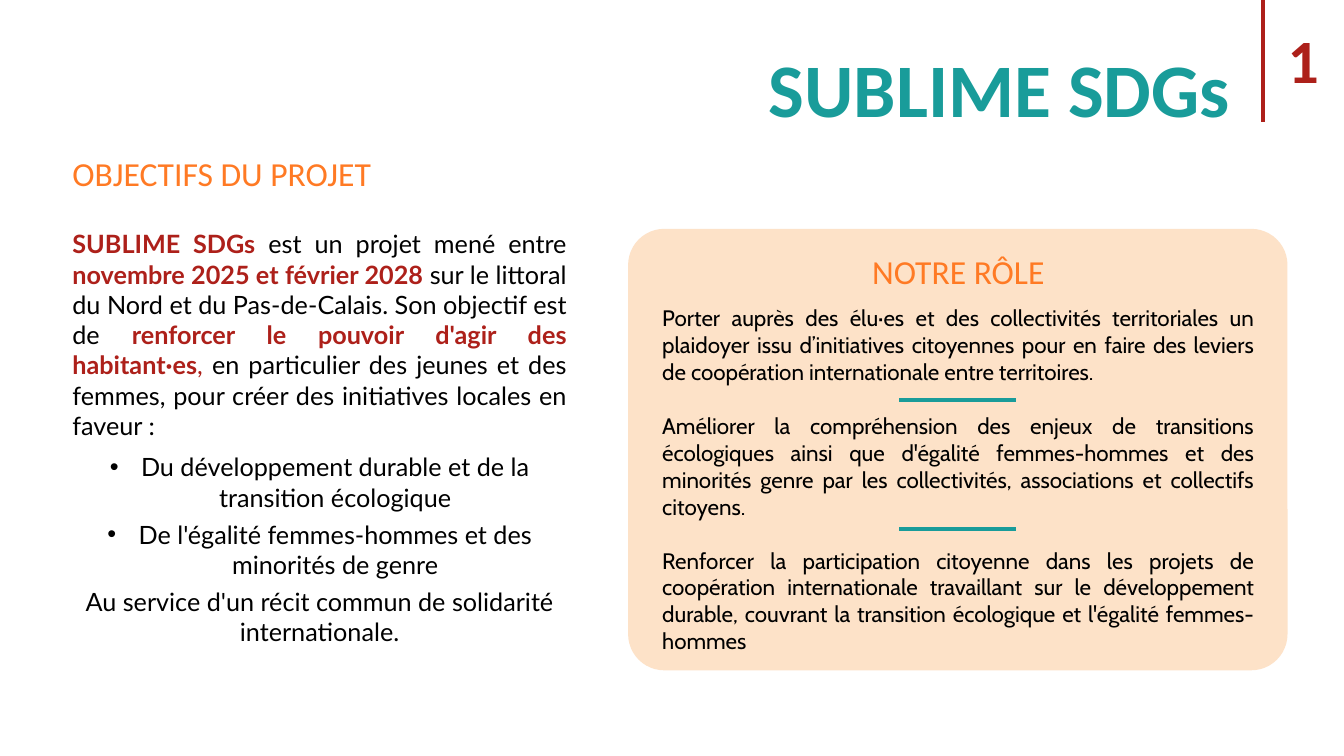
from lxml.etree import SubElement
from pptx import Presentation
from pptx.dml.color import RGBColor
from pptx.enum.shapes import MSO_CONNECTOR, MSO_SHAPE
from pptx.enum.text import PP_ALIGN
from pptx.oxml.ns import qn
from pptx.util import Inches, Pt

RED = RGBColor(0xAD, 0x20, 0x1A)
TEAL = RGBColor(0x19, 0x9C, 0x9A)
ORANGE = RGBColor(0xFF, 0x7A, 0x24)
PEACH = RGBColor(0xFD, 0xE2, 0xC8)
BLACK = RGBColor(0, 0, 0)

# text, box (left, top, width, height), size, colour, bold, alignment
HEADINGS = [
    ("SUBLIME SDGs", (1.69, 0.37, 10.61, 1.01), 54, TEAL, True, PP_ALIGN.RIGHT),
    ("OBJECTIFS DU PROJET", (0.62, 1.47, 4.88, 0.5), 24, ORANGE, False, PP_ALIGN.LEFT),
    ("NOTRE RÔLE", (8.09, 2.44, 2.83, 0.5), 24, ORANGE, False, PP_ALIGN.CENTER),
]
PAGE_NUMBER = "1"
# text, colour, bold
PROJECT = [
    ("SUBLIME SDGs", RED, True),
    (" est un projet mené entre ", BLACK, False),
    ("novembre 2025 et février 2028", RED, True),
    (" sur le littoral du Nord et du Pas-de‑Calais. Son objectif est de ", BLACK, False),
    ("renforcer le pouvoir d'agir des habitant·es", RED, True),
    (", ", RED, False),
    ("en particulier des jeunes et des femmes, pour créer des initiatives "
     "locales en faveur :", BLACK, False),
]
GOALS = [
    "Du développement durable et de la transition écologique",
    "De l'égalité femmes‑hommes et des minorités de genre",
]
CONCLUSION = "Au service d'un récit commun de solidarité internationale."
ROLES = [
    "Porter auprès des élu·es et des collectivités territoriales un plaidoyer issu "
    "d’initiatives citoyennes pour en faire des leviers de coopération "
    "internationale entre territoires.",
    "Améliorer la compréhension des enjeux de transitions écologiques ainsi que "
    "d'égalité femmes-hommes et des minorités genre par les collectivités, "
    "associations et collectifs citoyens.",
    "Renforcer la participation citoyenne dans les projets de coopération "
    "internationale travaillant sur le développement durable, couvrant la "
    "transition écologique et l'égalité femmes-hommes",
]
ROLE_GAP = Pt(19.4)  # one line of the role text
SEPARATOR_TOPS = (3.97, 5.25)


def add_text_frame(slide, box):
    frame = slide.shapes.add_textbox(*map(Inches, box)).text_frame
    frame.word_wrap = True
    return frame


def set_font(font, name, size, color, bold=False):
    font.name, font.size, font.bold = name, Pt(size), bold
    font.color.rgb = color


def add_rule(slide, start, end, color, width):
    rule = slide.shapes.add_connector(
        MSO_CONNECTOR.STRAIGHT, *map(Inches, start + end))
    rule.line.color.rgb = color
    rule.line.width = Pt(width)
    SubElement(rule._element.spPr, qn("a:effectLst"))


def add_bullet(paragraph):
    properties = paragraph._p.get_or_add_pPr()
    properties.set("marL", str(Inches(0.31)))
    properties.set("indent", str(-Inches(0.31)))
    SubElement(properties, qn("a:buFont"), typeface="Arial")
    SubElement(properties, qn("a:buChar"), char="•")


def add_project(slide):
    frame = add_text_frame(slide, (0.62, 2.22, 5.1, 4.29))
    intro = frame.paragraphs[0]
    intro.alignment = PP_ALIGN.JUSTIFY
    intro.space_after = Pt(8)
    intro.font.name, intro.font.size = "Lato", Pt(18)
    for text, color, bold in PROJECT:
        run = intro.add_run()
        run.text = text
        run.font.color.rgb, run.font.bold = color, bold
    for text in GOALS + [CONCLUSION]:
        paragraph = frame.add_paragraph()
        paragraph.text = text
        paragraph.alignment = PP_ALIGN.CENTER
        paragraph.space_after = Pt(5)
        if text in GOALS:
            add_bullet(paragraph)
        set_font(paragraph.font, "Lato", 18, BLACK)


def add_role_card(slide):
    card = slide.shapes.add_shape(
        MSO_SHAPE.ROUNDED_RECTANGLE, *map(Inches, (6.23, 2.27, 6.54, 4.38)))
    card.adjustments[0] = 0.082
    card.shadow.inherit = False
    card.fill.solid()
    card.fill.fore_color.rgb = PEACH
    card.line.fill.background()

    frame = add_text_frame(slide, (6.47, 2.97, 6.07, 3.6))
    for index, role in enumerate(ROLES):
        paragraph = frame.add_paragraph() if index else frame.paragraphs[0]
        paragraph.text = role
        paragraph.alignment = PP_ALIGN.JUSTIFY
        if index:
            paragraph.space_before = ROLE_GAP
        set_font(paragraph.font, "Cabin", 16, BLACK)
    for top in SEPARATOR_TOPS:
        add_rule(slide, (8.92, top), (10.08, top), TEAL, 2.75)


def add_page_number(slide):
    frame = add_text_frame(slide, (12.77, 0.25, 0.61, 0.76))
    frame.margin_left = frame.margin_right = 0
    number = frame.paragraphs[0]
    number.text = PAGE_NUMBER
    number.line_spacing = 0.9
    set_font(number.font, "Calibri", 44, RED, True)
    add_rule(slide, (12.53, 0), (12.53, 1.21), RED, 3)


def main():
    deck = Presentation()
    deck.slide_width, deck.slide_height = Inches(13.33), Inches(7.5)
    slide = deck.slides.add_slide(deck.slide_layouts[6])
    add_page_number(slide)
    add_project(slide)
    add_role_card(slide)
    for text, box, size, color, bold, alignment in HEADINGS:
        heading = add_text_frame(slide, box).paragraphs[0]
        heading.text = text
        heading.alignment = alignment
        set_font(heading.font, "Calibri", size, color, bold)
    deck.save("out.pptx")


if __name__ == "__main__":
    main()
